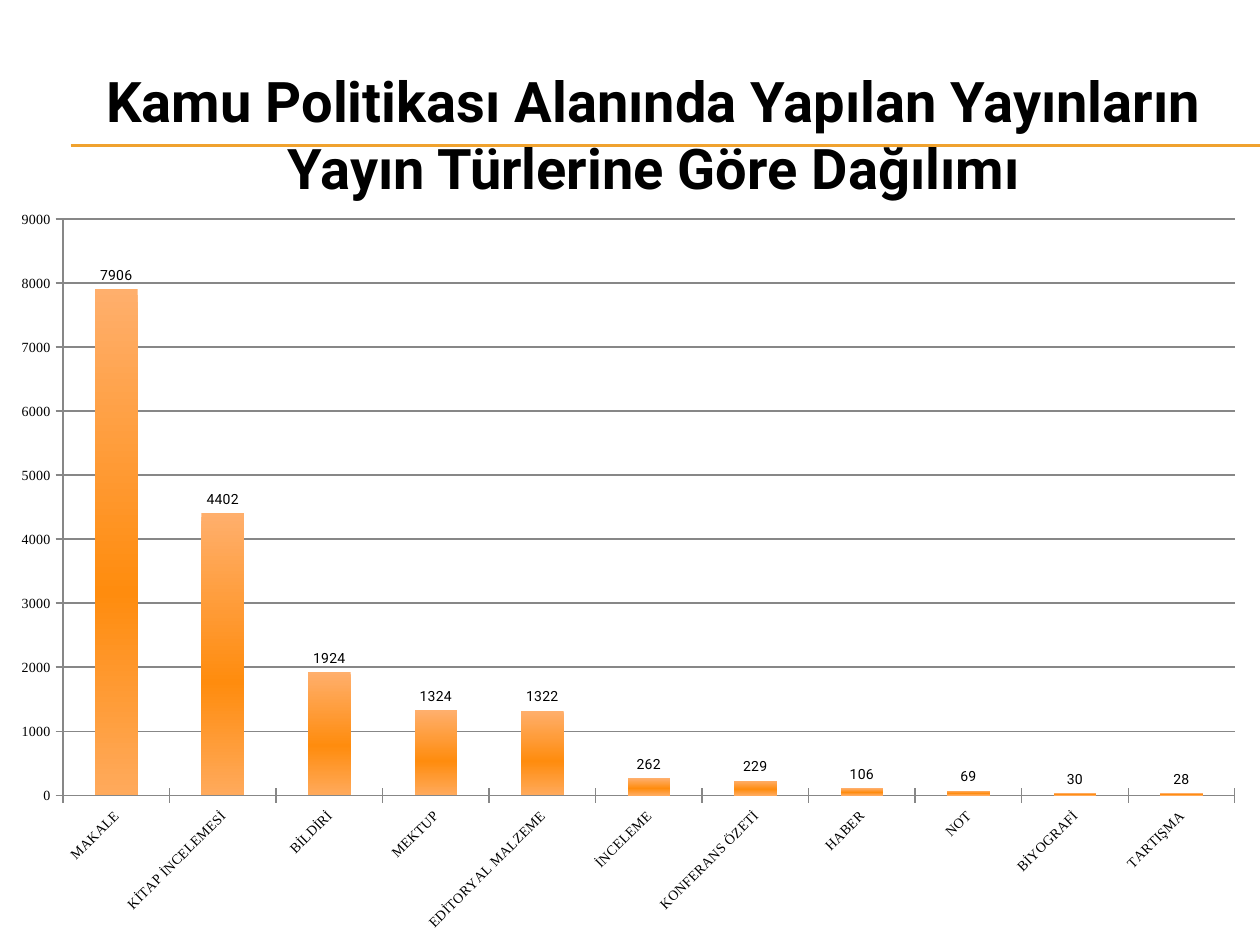
from dataclasses import dataclass

from lxml import etree
from pptx import Presentation
from pptx.chart.data import CategoryChartData
from pptx.dml.color import RGBColor
from pptx.enum.chart import XL_CHART_TYPE, XL_LABEL_POSITION, XL_TICK_MARK
from pptx.enum.shapes import MSO_CONNECTOR
from pptx.enum.text import MSO_ANCHOR, PP_ALIGN
from pptx.oxml import parse_xml
from pptx.oxml.ns import nsdecls, qn
from pptx.util import Inches, Pt

COLUMNS = XL_CHART_TYPE.COLUMN_CLUSTERED
OUTSIDE_END = XL_LABEL_POSITION.OUTSIDE_END
TICK = XL_TICK_MARK.CROSS
STRAIGHT = MSO_CONNECTOR.STRAIGHT
MIDDLE = MSO_ANCHOR.MIDDLE
CENTER = PP_ALIGN.CENTER


@dataclass(frozen=True)
class Theme:
    text: RGBColor = RGBColor(0, 0, 0)
    rule: RGBColor = RGBColor(0xF0, 0xA2, 0x2E)
    grid: RGBColor = RGBColor(0x87, 0x87, 0x87)
    bar_stops: tuple = ((0, "FFAF6C"), (60, "FF8C0E"), (100, "FFAA5C"))
    sans: str = "Roboto"
    serif: str = "Times New Roman"
    title_size: Pt = Pt(32)
    chart_size: Pt = Pt(10)
    label_size: Pt = Pt(8)
    line_width: Pt = Pt(0.75)


@dataclass(frozen=True)
class Publication:
    kind: str
    count: int


@dataclass(frozen=True)
class Rule:
    left: float
    right: float
    top: float


THEME = Theme()
RULES = [Rule(0.56, 10, 1.15), Rule(0.56, 10, 1.16)]
PUBLICATIONS = [
    Publication("MAKALE", 7906),
    Publication("KİTAP İNCELEMESİ", 4402),
    Publication("BİLDİRİ", 1924),
    Publication("MEKTUP", 1324),
    Publication("EDİTORYAL MALZEME", 1322),
    Publication("İNCELEME", 262),
    Publication("KONFERANS ÖZETİ", 229),
    Publication("HABER", 106),
    Publication("NOT", 69),
    Publication("BİYOGRAFİ", 30),
    Publication("TARTIŞMA", 28),
]


def set_all(target, values: dict) -> None:
    for name, value in values.items():
        setattr(target, name, value)


def set_font(font, family: str, size: Pt, bold: bool = False) -> None:
    set_all(font, {"name": family, "size": size, "bold": bold})
    font.color.rgb = THEME.text


def set_line(line, color: RGBColor) -> None:
    line.color.rgb = color
    line.width = THEME.line_width


def add_title(page, text: str):
    title = page.shapes.title
    set_all(title, {"left": Inches(0.7), "top": Inches(0.47),
                    "width": Inches(8.98), "height": Inches(1.18)})
    set_all(title.text_frame, {"word_wrap": True, "vertical_anchor": MIDDLE})
    para = title.text_frame.paragraphs[0]
    para.alignment = CENTER
    span = para.add_run()
    span.text = text
    set_font(span.font, THEME.sans, THEME.title_size, bold=True)
    return title


def add_rule(page, rule: Rule, title) -> None:
    line = page.shapes.add_connector(
        STRAIGHT, Inches(rule.left), Inches(rule.top),
        Inches(rule.right), Inches(rule.top))
    set_line(line.line, THEME.rule)
    etree.SubElement(line.element.spPr, qn("a:effectLst"))
    # The rules run behind the title
    title.element.addprevious(line.element)


def fill_bars(chart) -> None:
    stops = "".join(
        f'<a:gs pos="{percent * 1000}"><a:srgbClr val="{color}"/></a:gs>'
        for percent, color in THEME.bar_stops)
    chart.plots[0].series[0].format.line.fill.background()
    bars = next(chart.element.iter(qn("c:ser")))
    bars.find(qn("c:spPr")).insert(0, parse_xml(
        f'<a:gradFill {nsdecls("a")} rotWithShape="1"><a:gsLst>{stops}</a:gsLst>'
        '<a:lin ang="5400000" scaled="0"/></a:gradFill>'))


def slant_category_labels(chart) -> None:
    axis = next(chart.element.iter(qn("c:catAx")))
    body = next(axis.find(qn("c:txPr")).iter(qn("a:bodyPr")))
    body.set("rot", "-2700000")


def place_plot(chart, x: float, y: float, w: float, h: float) -> None:
    plot_area = next(chart.element.iter(qn("c:plotArea")))
    for old in plot_area.findall(qn("c:layout")):
        plot_area.remove(old)
    sizes = "".join(f'<c:{name} val="{value}"/>'
                    for name, value in (("x", x), ("y", y), ("w", w), ("h", h)))
    plot_area.insert(0, parse_xml(
        f'<c:layout {nsdecls("c")}><c:manualLayout><c:layoutTarget val="inner"/>'
        '<c:xMode val="edge"/><c:yMode val="edge"/>'
        f'{sizes}</c:manualLayout></c:layout>'))


def add_publication_chart(page, publications: list[Publication]) -> None:
    data = CategoryChartData()
    data.categories = [item.kind for item in publications]
    data.add_series("Series 1", [item.count for item in publications])
    chart = page.shapes.add_chart(
        COLUMNS, Inches(0), Inches(1.56), Inches(10), Inches(5.94), data).chart
    set_all(chart, {"has_legend": False, "has_title": False})
    set_font(chart.font, THEME.sans, THEME.chart_size)
    place_plot(chart, 0.05, 0.03, 0.93, 0.77)

    # Bars and their values
    plot = chart.plots[0]
    set_all(plot, {"gap_width": 150, "vary_by_categories": False,
                   "has_data_labels": True})
    fill_bars(chart)
    set_all(plot.data_labels, {"show_value": True, "position": OUTSIDE_END})
    set_font(plot.data_labels.font, THEME.sans, THEME.label_size)

    # Axes and grid
    for axis in (chart.category_axis, chart.value_axis):
        axis.major_tick_mark = TICK
        set_font(axis.tick_labels.font, THEME.serif, THEME.label_size)
        set_line(axis.format.line, THEME.grid)
    slant_category_labels(chart)
    set_all(chart.value_axis, {"minimum_scale": 0, "maximum_scale": 9000,
                               "major_unit": 1000, "has_major_gridlines": True})
    set_line(chart.value_axis.major_gridlines.format.line, THEME.grid)


def main() -> None:
    deck = Presentation()
    set_all(deck, {"slide_width": Inches(10), "slide_height": Inches(7.5)})
    page = deck.slides.add_slide(deck.slide_layouts[5])
    title = add_title(
        page, "Kamu Politikası Alanında Yapılan Yayınların Yayın Türlerine Göre Dağılımı")
    for rule in RULES:
        add_rule(page, rule, title)
    add_publication_chart(page, PUBLICATIONS)
    deck.save("out.pptx")


if __name__ == "__main__":
    main()
